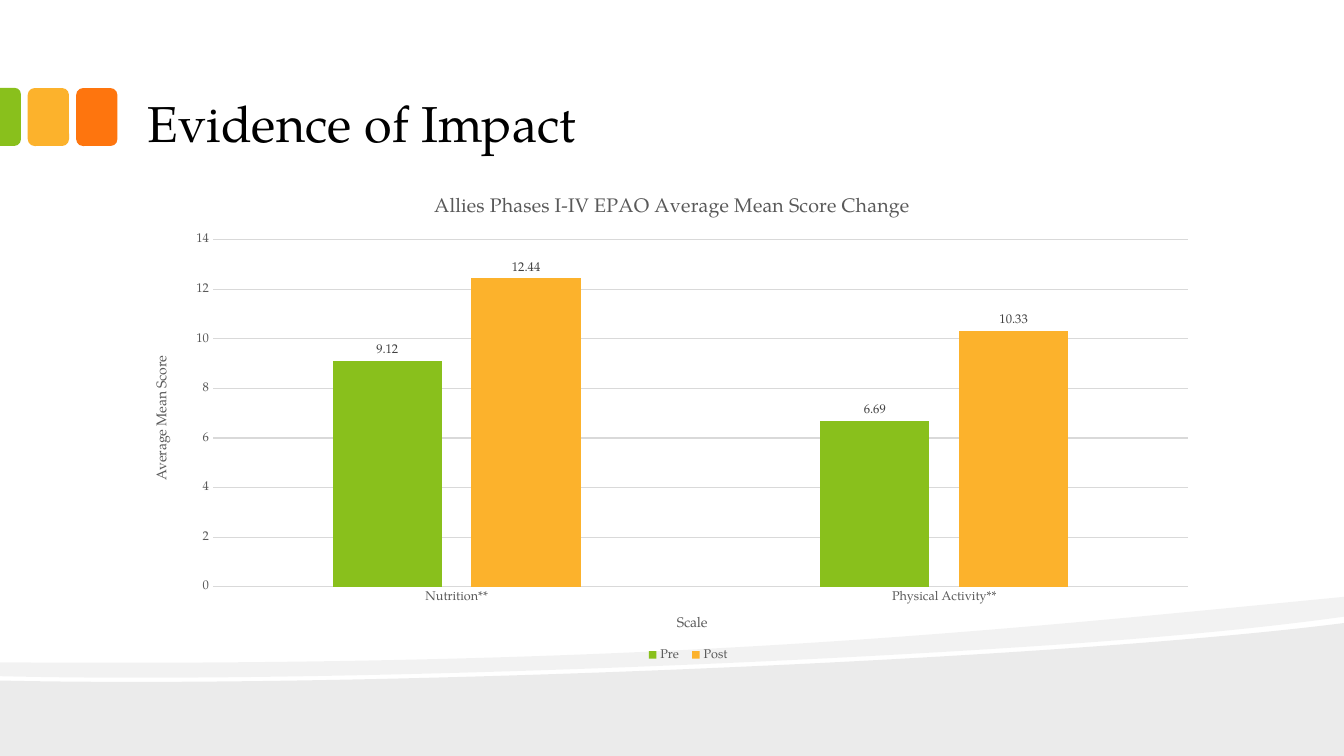
from dataclasses import dataclass

from lxml.etree import SubElement
from pptx import Presentation
from pptx.chart.data import CategoryChartData
from pptx.dml.color import RGBColor
from pptx.enum.chart import (XL_CHART_TYPE, XL_LABEL_POSITION,
                             XL_LEGEND_POSITION, XL_TICK_MARK)
from pptx.enum.shapes import MSO_SHAPE
from pptx.enum.text import MSO_ANCHOR
from pptx.oxml.ns import qn
from pptx.util import Cm, Pt


@dataclass(frozen=True)
class Theme:
    font: str = "TeX Gyre Pagella"
    black: str = "000000"
    green: str = "89C01C"
    yellow: str = "FCB22C"
    orange: str = "FE750E"
    grid: str = "D9D9D9"
    axis_text: str = "595959"
    label_text: str = "404040"
    heading: int = 36
    chart_title: int = 14
    axis_title: int = 10
    small: int = 9


THEME = Theme()
WIDTH, HEIGHT = 33.87, 19.05


def style_font(font, size, color):
    font.name = THEME.font
    font.size = Pt(size)
    font.bold = False
    font.color.rgb = RGBColor.from_string(color)


def fill_shape(sp, color, opacity=100):
    sp.shadow.inherit = False
    sp.fill.solid()
    sp.fill.fore_color.rgb = RGBColor.from_string(color)
    sp.line.fill.background()
    if opacity < 100:
        clr = sp._element.spPr.find(qn("a:solidFill"))[0]
        SubElement(clr, qn("a:alpha")).set("val", str(opacity * 1000))


def add_wave(s, start, segments, opacity):
    """Draw an outline whose segments hold one point (line) or three (curve)."""
    points = [(Cm(x), Cm(y)) for segment in segments for x, y in segment]
    builder = s.shapes.build_freeform(Cm(start[0]), Cm(start[1]))
    builder.add_line_segments(points, close=True)
    sp = builder.convert_to_shape()

    # Join the three points of each curve into one cubic segment
    lines = iter(list(sp._element.iter(qn("a:lnTo"))))
    for segment in segments:
        first, *others = [next(lines) for _ in segment]
        if others:
            first.tag = qn("a:cubicBezTo")
            for line in others:
                first.append(line[0])
                line.getparent().remove(line)
    fill_shape(sp, THEME.black, opacity)


def add_tile(s, kind, left, top, width, height, color):
    sp = s.shapes.add_shape(kind, Cm(left), Cm(top), Cm(width), Cm(height))
    fill_shape(sp, color)
    return sp


def add_heading(s, text):
    tf = s.shapes.add_textbox(Cm(3.39), Cm(0.43), Cm(27.08), Cm(3.61)).text_frame
    tf.word_wrap = True
    tf.vertical_anchor = MSO_ANCHOR.BOTTOM
    tf.margin_left = tf.margin_right = Cm(0.33)
    tf.margin_top = tf.margin_bottom = Cm(0.18)
    tf.text = text
    p = tf.paragraphs[0]
    p.line_spacing = 0.9
    style_font(p.runs[0].font, THEME.heading, THEME.black)


def set_title(owner, text, size):
    """Title a chart or an axis."""
    owner.has_title = True
    title = owner.chart_title if hasattr(owner, "chart_title") else owner.axis_title
    title.text_frame.text = text
    style_font(title.text_frame.paragraphs[0].runs[0].font, size, THEME.axis_text)


def style_axis(axis, title):
    set_title(axis, title, THEME.axis_title)
    axis.major_tick_mark = axis.minor_tick_mark = XL_TICK_MARK.NONE
    style_font(axis.tick_labels.font, THEME.small, THEME.axis_text)


def style_line(line):
    line.color.rgb = RGBColor.from_string(THEME.grid)
    line.width = Pt(0.75)


def add_legend(chart, x, y, w, h):
    """Place the legend by fractions of the chart area."""
    chart.has_legend = True
    legend = chart.legend
    legend.position = XL_LEGEND_POSITION.BOTTOM
    legend.include_in_layout = False
    style_font(legend.font, THEME.small, THEME.axis_text)
    layout = legend._element.find(qn("c:layout"))
    if layout is None:
        layout = SubElement(legend._element, qn("c:layout"))
        legend._element.find(qn("c:legendPos")).addnext(layout)
    manual = SubElement(layout, qn("c:manualLayout"))
    for tag, value in (("xMode", "edge"), ("yMode", "edge"),
                       ("x", x), ("y", y), ("w", w), ("h", h)):
        SubElement(manual, qn(f"c:{tag}")).set("val", str(value))


def add_score_chart(s):
    data = CategoryChartData()
    data.categories = ["Nutrition**", "Physical Activity**"]
    data.add_series("Pre", (9.12, 6.69))
    data.add_series("Post", (12.44, 10.33))
    chart = s.shapes.add_chart(XL_CHART_TYPE.COLUMN_CLUSTERED, Cm(3.4), Cm(4.44),
                               Cm(27.08), Cm(12.7), data).chart
    style_font(chart.font, THEME.axis_title, THEME.black)
    set_title(chart, "Allies Phases I-IV EPAO Average Mean Score Change",
              THEME.chart_title)

    # Axes and grid
    style_axis(chart.category_axis, "Scale")
    style_line(chart.category_axis.format.line)
    value_axis = chart.value_axis
    style_axis(value_axis, "Average Mean Score")
    value_axis.format.line.fill.background()
    value_axis.minimum_scale, value_axis.maximum_scale = 0, 14
    value_axis.major_unit = 2
    style_line(value_axis.major_gridlines.format.line)

    add_legend(chart, 0.47, 0.93, 0.09, 0.04)

    # Columns and value labels
    plot = chart.plots[0]
    plot.gap_width, plot.overlap = 219, -27
    plot.vary_by_categories = False
    for series, color in zip(plot.series, (THEME.green, THEME.yellow)):
        series.format.fill.solid()
        series.format.fill.fore_color.rgb = RGBColor.from_string(color)
        labels = series.data_labels
        labels.show_value = True
        labels.position = XL_LABEL_POSITION.OUTSIDE_END
        style_font(labels.font, THEME.small, THEME.label_text)


def main():
    prs = Presentation()
    prs.slide_width, prs.slide_height = Cm(WIDTH), Cm(HEIGHT)
    s = prs.slides.add_slide(prs.slide_layouts[6])

    # Waves along the bottom
    add_wave(s, (WIDTH, 15.7), [
        [(WIDTH, HEIGHT)], [(0, HEIGHT)], [(0, 17.15)],
        [(8.94, 17.35), (26.47, 16.64), (WIDTH, 15.7)]], 8)
    add_wave(s, (WIDTH, 15.04), [
        [(WIDTH, 15.54)],
        [(31.88, 15.82), (29.18, 16.08), (26.14, 16.28)],
        [(17.73, 16.84), (6.55, 17.2), (0, 17.04)],
        [(0, 16.69)],
        [(16.56, 16.81), (24.66, 15.93), (WIDTH, 15.04)]], 5)

    # Tiles beside the heading
    for i, color in enumerate((THEME.yellow, THEME.orange)):
        add_tile(s, MSO_SHAPE.ROUNDED_RECTANGLE, 0.7 + 1.22 * i, 2.22, 1.04, 1.46, color)
    edge = add_tile(s, MSO_SHAPE.ROUND_2_SAME_RECTANGLE, -0.47, 2.68, 1.46, 0.53,
                    THEME.green)
    edge.rotation = 90
    edge.adjustments[0] = 0.29

    add_heading(s, "Evidence of Impact")
    add_score_chart(s)
    prs.save("out.pptx")


if __name__ == "__main__":
    main()
